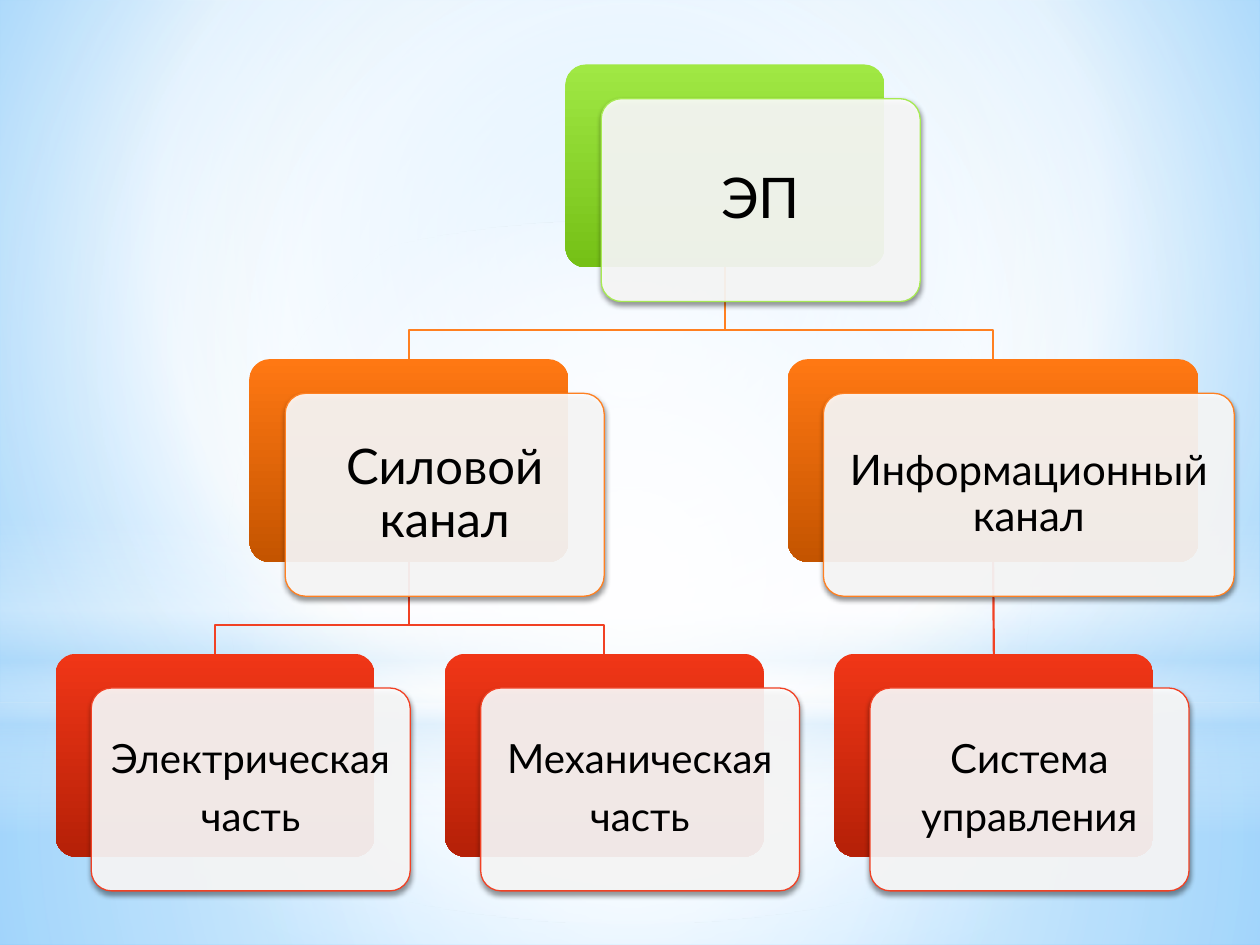
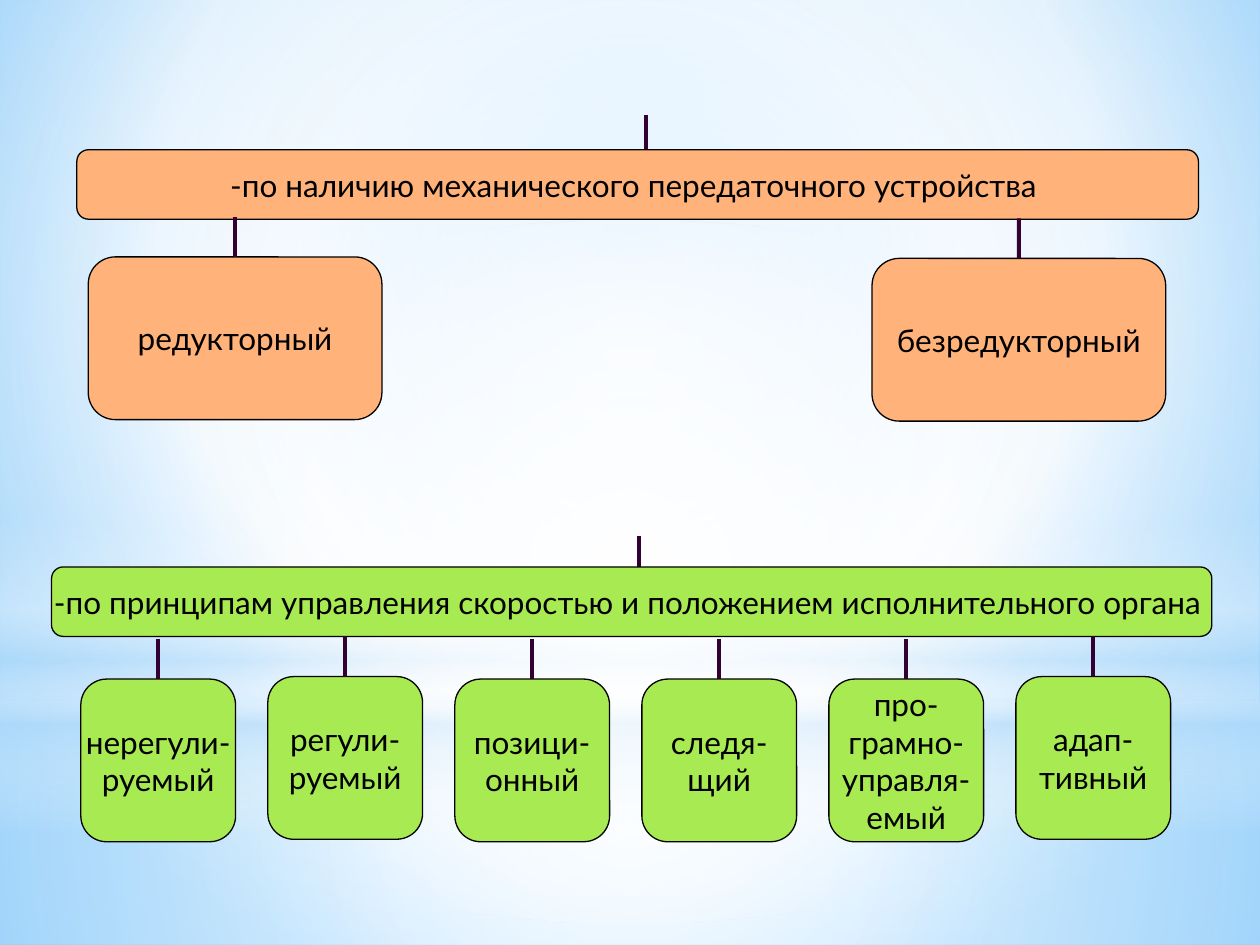
from dataclasses import dataclass

from lxml import etree
from pptx import Presentation
from pptx import util as u
from pptx.dml.color import RGBColor
from pptx.enum import shapes, text
from pptx.oxml import parse_xml
from pptx.oxml.ns import nsdecls, qn

Cm, Pt = u.Cm, u.Pt
RECT = shapes.MSO_SHAPE.RECTANGLE
ROUND = shapes.MSO_SHAPE.ROUNDED_RECTANGLE
OVAL = shapes.MSO_SHAPE.OVAL
BOTTOM, TOP = 2, 0


@dataclass(frozen=True)
class Theme:
    font: str = "Lato"
    ink: str = "000000"
    white: str = "FFFFFF"
    sky: str = "B4DCFA"
    stem: str = "330033"
    peach: str = "FFB37A"
    lime: str = "A7EA52"
    # each level: line, gradient top, gradient bottom
    levels: tuple = (("A7EA52", "A0E844", "75C016"),
                     ("FF8021", "FF7813", "C45400"),
                     ("F14124", "F03617", "B52007"))
    small: int = 18
    leaf: int = 23
    wide: int = 24
    mid: int = 28
    big: int = 32


def paint(host, stops, ring=None):
    """Swap the host's empty fill for a gradient: circular with ring, else top to bottom."""
    marks = "".join(
        f'<a:gs pos="{pos * 1000}"><a:srgbClr val="{color}">'
        f'<a:alpha val="{alpha * 1000}"/></a:srgbClr></a:gs>'
        for pos, color, alpha in stops)
    if ring:
        sides = " ".join(f'{k}="{v * 1000}"' for k, v in zip("ltrb", ring))
        way = f'<a:path path="circle"><a:fillToRect {sides}/></a:path>'
    else:
        way = '<a:lin ang="5400000" scaled="0"/>'
    grad = parse_xml(f'<a:gradFill {nsdecls("a")} rotWithShape="1">'
                     f'<a:gsLst>{marks}</a:gsLst>{way}</a:gradFill>')
    host.replace(host.find(qn("a:noFill")), grad)


class Deck:
    def __init__(self, theme):
        self.theme = theme
        self.prs = Presentation()
        self.prs.slide_width, self.prs.slide_height = Cm(25.4), Cm(19.05)
        self.slide = None

    def page(self):
        self.slide = self.prs.slides.add_slide(self.prs.slide_layouts[6])

    def shape(self, kind, box, fill=None, line=None, adj=None):
        item = self.slide.shapes.add_shape(kind, *map(Cm, box))
        item.shadow.inherit = False
        if adj:
            item.adjustments[0] = adj
        if fill:
            item.fill.solid()
            item.fill.fore_color.rgb = RGBColor.from_string(fill)
        else:
            item.fill.background()
        if line:
            self.stroke(item, line, 0.75)
        else:
            item.line.fill.background()
        return item

    def stroke(self, item, color, width):
        item.line.color.rgb = RGBColor.from_string(color)
        item.line.width = Pt(width)

    def caption(self, item, words, size):
        """Fill a shape with centred text, one paragraph per line."""
        frame = item.text_frame
        frame.text = words
        frame.vertical_anchor = text.MSO_ANCHOR.MIDDLE
        for par in frame.paragraphs:
            par.alignment = text.PP_ALIGN.CENTER
            par.font.name = self.theme.font
            par.font.size = Pt(size)
            par.font.color.rgb = RGBColor.from_string(self.theme.ink)
        return frame

    def backdrop(self):
        """Give the master its sky gradient and soft light bands."""
        white, sky = self.theme.white, self.theme.sky
        master = self.prs.slide_master
        master.background.fill.background()
        paint(master.element.find(".//" + qn("p:bgPr")),
              [(0, "9ED5FF", 100), (60, white, 100), (100, "5BB9FF", 100)],
              (20, 10, 20, 60))
        mid = (50,) * 4
        bands = [
            (RECT, 14.17, 4.88, mid, [(0, white, 91), (37, white, 76), (100, sky, 79)]),
            (RECT, 0, 14.17, mid, [(0, white, 89), (48, white, 62), (100, sky, 79)]),
            (RECT, 10.46, 6.35, None,
             [(0, white, 0), (29, white, 30), (45, sky, 40),
              (55, white, 26), (65, sky, 60), (100, white, 0)]),
            (OVAL, 4.45, 14.17, mid, [(0, white, 100), (56, white, 0)]),
        ]
        for num, (kind, top, high, ring, stops) in enumerate(bands, 20):
            band = self.shape(kind, (0, top, 25.4, high))
            paint(band.element.spPr, stops, ring)
            band.element.nvSpPr.cNvPr.id = num
            master.shapes.element.append(band.element)

    def card(self, level, left, words, size, inset, wide=6.43):
        """Draw a coloured plate with a frosted caption over it; return the plate."""
        line, light, dark = self.theme.levels[level]
        top, high = 1.3 + 5.94 * level, 4.09
        plate = self.shape(ROUND, (left, top, wide, high), adj=0.1)
        paint(plate.element.spPr, [(0, light, 100), (100, dark, 100)])
        front = self.shape(ROUND, (left + 0.72, top + 0.69, wide, high),
                           self.theme.white, line, 0.1)
        props = front.element.spPr
        etree.SubElement(props.find(qn("a:solidFill"))[0], qn("a:alpha"), val="90000")
        props.find(qn("a:effectLst")).append(parse_xml(
            f'<a:outerShdw {nsdecls("a")} blurRad="{Pt(3.1)}" dist="{Pt(1.8)}" '
            'dir="5400000" rotWithShape="0"><a:srgbClr val="000000">'
            '<a:alpha val="45000"/></a:srgbClr></a:outerShdw>'))
        frame = self.caption(front, words, size)
        frame.word_wrap = True
        frame.margin_left = frame.margin_right = Cm(inset)
        frame.margin_top = frame.margin_bottom = Cm(inset)
        for par in frame.paragraphs:
            par.line_spacing = 0.9
            par.space_after = Pt(0.35 * size)
        return plate

    def wire(self, start, end, color, width):
        item = self.slide.shapes.add_connector(
            shapes.MSO_CONNECTOR.STRAIGHT, *map(Cm, start + end))
        self.stroke(item, color, width)
        etree.SubElement(item.element.spPr, qn("a:effectLst"))
        return item

    def branch(self, boss, kid, level, straight=False):
        """Link two plates behind all cards, with a bent or a straight line."""
        color = self.theme.levels[level][0]
        if straight:
            item = self.wire((0, 0), (0, 0), color, 1.25)
            item.begin_connect(boss, BOTTOM)
            item.end_connect(kid, TOP)
        else:
            x, y = boss.left + boss.width // 2, boss.top + boss.height
            end = kid.left + kid.width // 2
            turn = y + Cm(1.27)
            route = self.slide.shapes.build_freeform(x, y)
            route.add_line_segments([(x, turn), (end, turn), (end, kid.top)], close=False)
            item = route.convert_to_shape()
            item.fill.background()
            item.shadow.inherit = False
            self.stroke(item, color, 1.25)
        self.slide.shapes.element.insert(2, item.element)

    def label(self, box, words, fill):
        item = self.shape(ROUND, box, fill, self.theme.ink, 0.167)
        self.caption(item, words, self.theme.small).word_wrap = False
        return item

    def kid(self, box, words, fill):
        """Draw a label hung on a short stem."""
        item = self.label(box, words, fill)
        x, top = box[0] + box[2] / 2, box[1]
        stem = self.wire((x, top - 0.81), (x, top), self.theme.stem, 2.25)
        stem.end_connect(item, TOP)


def drive(deck):
    look = deck.theme
    deck.page()
    deck.backdrop()
    root = deck.card(0, 11.4, "ЭП", look.big, 0.33)
    power = deck.card(1, 5.03, "Силовой канал", look.mid, 0.3)
    info = deck.card(1, 15.88, "Информационный канал", look.wide, 0.25, 8.28)
    leaves = ["Электрическая\nчасть", "Механическая\nчасть", "Система\nуправления"]
    elec, mech, system = [deck.card(2, 1.12 + 7.85 * i, words, look.leaf, 0.25)
                          for i, words in enumerate(leaves)]
    deck.branch(root, power, 1)
    deck.branch(power, elec, 2)
    deck.branch(power, mech, 2)
    deck.branch(root, info, 1)
    deck.branch(info, system, 2, straight=True)


def kinds(deck):
    look = deck.theme
    deck.page()
    deck.wire((13.03, 2.31), (13.03, 3.1), look.stem, 2.25)
    deck.label((1.55, 3.02, 22.61, 1.4),
               "-по наличию механического передаточного устройства ", look.peach)
    deck.kid((1.78, 5.18, 5.92, 3.28), "редукторный", look.peach)
    deck.kid((17.58, 5.21, 5.92, 3.28), "безредукторный", look.peach)

    deck.wire((12.88, 10.8), (12.88, 11.6), look.stem, 2.25)
    deck.label((1.04, 11.43, 23.39, 1.4),
               "-по принципам управления скоростью и положением исполнительного органа ",
               look.lime)
    low, high = 13.69, 13.64
    modes = [(low, "нерегули-\nруемый"), (high, "регули-\nруемый"),
             (low, "позици-\nонный"), (low, "следя-\nщий"),
             (low, "про-\nграмно-\nуправля-\nемый"), (high, "адап-\nтивный")]
    for i, (top, words) in enumerate(modes):
        deck.kid((1.63 + 3.77 * i, top, 3.12, 3.28), words, look.lime)


def main():
    deck = Deck(Theme())
    drive(deck)
    kinds(deck)
    deck.prs.save("out.pptx")


if __name__ == "__main__":
    main()
